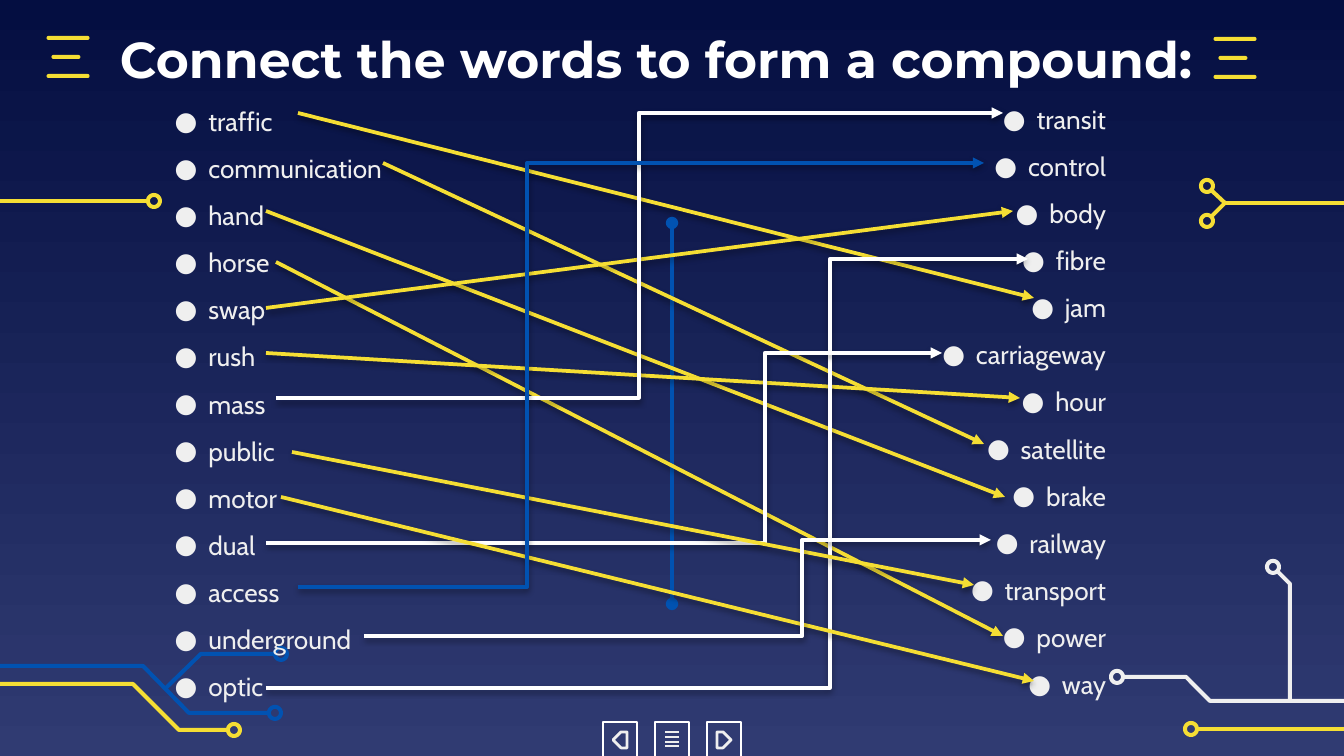
"""Build a word-matching slide about compound nouns in transport and communication."""
import math
from dataclasses import dataclass

import pptx
import pptx.dml.color
import pptx.enum.shapes
import pptx.enum.text
import pptx.oxml
import pptx.oxml.ns
import pptx.util
from lxml import etree


@dataclass(frozen=True)
class Theme:
    night: str = "040E41"
    dusk: str = "303B72"
    blue: str = "0152B1"
    yellow: str = "F5DE34"
    pale: str = "EFEFEF"
    white: str = "FFFFFF"
    body_font: str = "Cabin"
    title_font: str = "Montserrat"
    body_size: int = 14
    title_size: int = 27
    link: float = 2
    wire: float = 2.16
    axis: float = 2.25
    icon: float = 1.5


THEME = Theme()
SHAPES = pptx.enum.shapes.MSO_SHAPE
CONNECTORS = pptx.enum.shapes.MSO_CONNECTOR
ALIGN = pptx.enum.text.PP_ALIGN
SLIDE = (1344, 756)
SCALE = 9144000 / SLIDE[0]
MARGIN = 13
RING_RADIUS, RING_SIDES = 6, 32

TITLE = "Connect the words to form a compound:"
TITLE_BOX = (90, 23, 1132, 70)
COLUMNS = [
    ((155, 77, 482, 419), ALIGN.LEFT,
     ["traffic", "communication", "hand", "horse", "swap", "rush", "mass",
      "public", "motor", "dual", "access", "underground", "optic"]),
    ((637, 75, 482, 519), ALIGN.RIGHT,
     ["transit", "control", "body", "fibre", "jam", "carriageway", "hour",
      "satellite", "brake", "railway", "transport", "power", "way"]),
]
CIRCUITS = [
    (THEME.blue,
     [[(0, 666), (143, 666), (189, 713), (269, 713)],
      [(166, 688), (201, 654), (275, 654)]], [(275, 713), (281, 654)]),
    (THEME.yellow,
     [[(0, 684), (133, 684), (179, 730), (227, 730)]], [(234, 730)]),
    (THEME.yellow, [[(0, 201), (148, 201)]], [(154, 201)]),
    (THEME.yellow,
     [[(1211, 190), (1225, 203), (1211, 217)], [(1225, 203), (1344, 203)]],
     [(1207, 186), (1207, 221)]),
    (THEME.yellow, [[(1197, 729), (1344, 729)]], [(1191, 729)]),
    (THEME.pale,
     [[(1123, 677), (1186, 677), (1210, 701), (1344, 701)],
      [(1290, 701), (1290, 584), (1277, 571)]], [(1117, 677), (1273, 567)]),
]
BAR_CENTRES = [(1235, 39), (68, 38)]
BARS = [(0, 0, 43), (-2, 19, 29), (0, 38, 43)]
BAR_HEIGHT = 4
AXIS = ((672, 604), (672, 223))
BUTTON = (603, 722, 34, 46)
BUTTON_STEP = 52
ARROW_ICON = [(-7, 10), (-7, 26), (-1, 26), (7, 18), (-1, 10)]
MENU_ROWS = (732, 737, 742, 746)
LINKS = [
    ((298, 113), (1034, 298), THEME.yellow, None),
    ((383, 163), (984, 444), THEME.yellow, None),
    ((266, 211), (1005, 497), THEME.yellow, None),
    ((276, 262), (1003, 636), THEME.yellow, None),
    ((266, 308), (1013, 211), THEME.yellow, None),
    ((266, 353), (1020, 398), THEME.yellow, None),
    ((276, 398), (1003, 113), THEME.white, 639),
    ((266, 688), (1028, 259), THEME.white, 830),
    ((266, 543), (942, 353), THEME.white, 765),
    ((281, 497), (1034, 681), THEME.yellow, None),
    ((292, 452), (974, 585), THEME.yellow, None),
    ((364, 636), (991, 540), THEME.white, 802),
    ((298, 587), (984, 163), THEME.blue, 527),
]
SHADOW = (
    '<a:effectLst xmlns:a="http://schemas.openxmlformats.org/drawingml/2006/main">'
    '<a:outerShdw blurRad="40000" dist="20000" dir="5400000" rotWithShape="0">'
    '<a:srgbClr val="000000"><a:alpha val="38000"/></a:srgbClr>'
    '</a:outerShdw></a:effectLst>')


def emu(*lengths):
    return [round(length * SCALE) for length in lengths]


def rgb(colour):
    return pptx.dml.color.RGBColor.from_string(colour)


def child(parent, tag, **attributes):
    return etree.SubElement(parent, pptx.oxml.ns.qn(tag), attributes)


def stroke(item, colour, width):
    item.line.color.rgb = rgb(colour)
    item.line.width = pptx.util.Pt(width)


def add_text(page, place, paragraphs, align, font, size, colour, bold=False):
    box = page.shapes.add_textbox(*emu(*place))
    frame = box.text_frame
    frame.word_wrap = True
    margin, = emu(MARGIN)
    frame.margin_left = frame.margin_right = margin
    frame.margin_top = frame.margin_bottom = margin
    for number, text in enumerate(paragraphs):
        para = frame.add_paragraph() if number else frame.paragraphs[0]
        para.alignment = align
        span = para.add_run()
        span.text = text
        span.font.name, span.font.size = font, pptx.util.Pt(size)
        span.font.bold, span.font.color.rgb = bold, rgb(colour)
    return frame


def add_column(page, place, align, words):
    frame = add_text(page, place, words, align, THEME.body_font, THEME.body_size, THEME.pale)
    for para in frame.paragraphs:
        para.line_spacing = 1.5
        properties = para._p.get_or_add_pPr()
        properties.set("marL", str(pptx.util.Inches(0.3)))
        properties.set("indent", str(pptx.util.Inches(-0.25)))
        child(child(properties, "a:buClr"), "a:srgbClr", val=THEME.pale)
        child(properties, "a:buFont", typeface=THEME.body_font)
        child(properties, "a:buChar", char="●")


def add_outline(page, contours, colour, width, close=False):
    builder = None
    for contour in contours:
        start, *rest = [emu(*point) for point in contour]
        if builder is None:
            builder = page.shapes.build_freeform(*start, scale=1.0)
        else:
            builder.move_to(*start)
        builder.add_line_segments(rest, close=close)
    outline = builder.convert_to_shape()
    outline.shadow.inherit = False
    outline.fill.background()
    stroke(outline, colour, width)


def ring(centre):
    angles = [2 * math.pi * side / RING_SIDES for side in range(RING_SIDES + 1)]
    return [(centre[0] + RING_RADIUS * math.cos(angle),
             centre[1] + RING_RADIUS * math.sin(angle)) for angle in angles]


def add_block(page, preset, place, colour):
    block = page.shapes.add_shape(preset, *emu(*place))
    block.shadow.inherit = False
    block.fill.solid()
    block.fill.fore_color.rgb = rgb(colour)
    block.line.fill.background()
    return block


def add_line(page, start, end, colour, width, head=None, tail=None, turn=None, shadow=False):
    kind = CONNECTORS.STRAIGHT if turn is None else CONNECTORS.ELBOW
    line = page.shapes.add_connector(kind, *emu(*start, *end))
    stroke(line, colour, width)
    properties = line._element.spPr
    if turn is not None:
        share = round(100000 * (turn - start[0]) / (end[0] - start[0]))
        guides = properties.find(".//" + pptx.oxml.ns.qn("a:avLst"))
        child(guides, "a:gd", name="adj1", fmla=f"val {share}")
    for tag, style in (("a:headEnd", head), ("a:tailEnd", tail)):
        if style:
            child(line.line._get_or_add_ln(), tag, type=style)
    if shadow:
        properties.append(pptx.oxml.parse_xml(SHADOW))
    else:
        child(properties, "a:effectLst")


def add_navigation(page):
    left, top, width, height = BUTTON
    for number, direction in ((2, 1), (0, -1), (1, 0)):
        x = left + number * BUTTON_STEP
        button = add_block(page, SHAPES.RECTANGLE, (x, top, width, height), THEME.dusk)
        stroke(button, THEME.white, THEME.icon)
        centre = x + width / 2
        if direction:
            icon = [(centre + direction * dx, top + dy) for dx, dy in ARROW_ICON]
            add_outline(page, [icon], THEME.pale, THEME.icon, close=True)
        else:
            for y in MENU_ROWS:
                add_line(page, (centre - 7, y), (centre + 7, y), THEME.pale, THEME.icon)


def main():
    deck = pptx.Presentation()
    deck.slide_width, deck.slide_height = emu(*SLIDE)
    page = deck.slides.add_slide(deck.slide_layouts[6])
    backdrop = page.background.fill
    backdrop.gradient()
    backdrop.gradient_angle = 270
    for stop, colour in zip(backdrop.gradient_stops, (THEME.night, THEME.dusk)):
        stop.color.rgb = rgb(colour)

    for colour, wires, rings in CIRCUITS:
        add_outline(page, wires + [ring(centre) for centre in rings], colour, THEME.wire)
    for place, align, words in COLUMNS:
        add_column(page, place, align, words)
    title = add_text(page, TITLE_BOX, [TITLE], ALIGN.CENTER, THEME.title_font,
                     THEME.title_size, THEME.white, bold=True)
    title.vertical_anchor = pptx.enum.text.MSO_ANCHOR.MIDDLE
    for x, y in BAR_CENTRES:
        for dx, dy, width in BARS:
            place = (x + dx - width / 2, y + dy - BAR_HEIGHT / 2, width, BAR_HEIGHT)
            bar = add_block(page, SHAPES.ROUNDED_RECTANGLE, place, THEME.yellow)
            bar.adjustments[0] = 0.5
    add_line(page, *AXIS, THEME.blue, THEME.axis, head="oval", tail="oval")
    add_navigation(page)
    for start, end, colour, turn in LINKS:
        add_line(page, start, end, colour, THEME.link, tail="triangle", turn=turn, shadow=True)
    deck.save("out.pptx")


if __name__ == "__main__":
    main()
